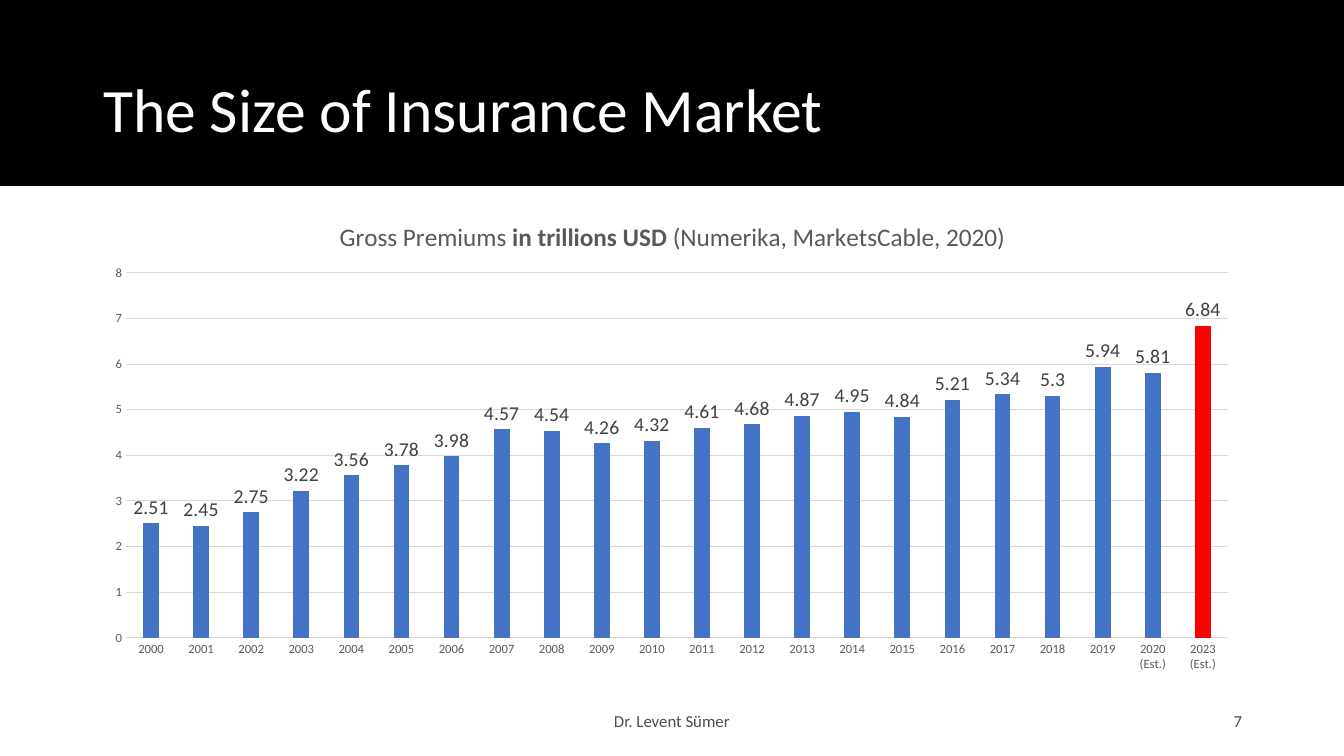
"""Build the insurance market size slide with its gross premiums column chart."""
from lxml.etree import SubElement
from pptx import Presentation
from pptx.chart.data import CategoryChartData
from pptx.dml.color import RGBColor
from pptx.enum.chart import XL_CHART_TYPE, XL_LABEL_POSITION, XL_TICK_MARK
from pptx.enum.shapes import MSO_SHAPE
from pptx.enum.text import MSO_ANCHOR, PP_ALIGN
from pptx.oxml.ns import qn
from pptx.util import Pt

HEADING = "The Size of Insurance Market"
CHART_TITLE = [
    ("Gross Premiums ", False),
    ("in trillions USD", True),
    (" (Numerika, MarketsCable, 2020)", False),
]
YEARS = [str(year) for year in range(2000, 2020)] + ["2020 (Est.)", "2023 (Est.)"]
PREMIUMS = [
    2.51, 2.45, 2.75, 3.22, 3.56, 3.78, 3.98, 4.57, 4.54, 4.26, 4.32,
    4.61, 4.68, 4.87, 4.95, 4.84, 5.21, 5.34, 5.3, 5.94, 5.81, 6.84,
]
FOOTERS = [
    ("Dr. Levent Sümer", 445, 454, PP_ALIGN.CENTER),
    ("7", 950, 302, PP_ALIGN.RIGHT),
]
COLORS = {
    "black": "000000", "white": "FFFFFF", "bar": "4472C4", "forecast": "FF0000",
    "grid": "D9D9D9", "axis": "595959", "label": "404040",
}
FONT = "Calibri"
EMU_PER_PX = 914400 / 100.8
SLIDE_W, SLIDE_H, BAND_H = 1344, 756, 186
CHART_BOX = (93, 202, 1159, 480)
PLOT_BOX = (126, 273, 1102, 365)


def px(*lengths):
    return [round(length * EMU_PER_PX) for length in lengths]


def color(name):
    return RGBColor.from_string(COLORS[name])


def style(font, size, name, bold=False):
    font.name, font.size, font.bold = FONT, Pt(size), bold
    font.color.rgb = color(name)


def add_band(slide, top, height, name):
    band = slide.shapes.add_shape(MSO_SHAPE.RECTANGLE, *px(0, top, SLIDE_W, height))
    band.shadow.inherit = False
    band.fill.solid()
    band.fill.fore_color.rgb = color(name)
    band.line.fill.background()


def place_heading(slide):
    heading = slide.shapes.title
    heading.left, heading.top, heading.width, heading.height = px(93, 40, 1159, 146)
    frame = heading.text_frame
    frame.text = HEADING
    frame.vertical_anchor = MSO_ANCHOR.MIDDLE
    paragraph = frame.paragraphs[0]
    paragraph.alignment, paragraph.line_spacing = PP_ALIGN.LEFT, 0.9
    style(paragraph.runs[0].font, 44, "white")
    slide.shapes.element.append(heading.element)


def add_footer(slide, words, left, width, alignment):
    frame = slide.shapes.add_textbox(*px(left, 701, width, 40)).text_frame
    frame.word_wrap = True
    frame.vertical_anchor = MSO_ANCHOR.MIDDLE
    frame.text = words
    paragraph = frame.paragraphs[0]
    paragraph.alignment, paragraph.space_after = alignment, Pt(6)
    style(paragraph.runs[0].font, 12, "black")
    for ink in frame._txBody.iter(qn("a:srgbClr")):
        SubElement(ink, qn("a:alpha"), val="70000")


def set_plot_layout(chart):
    plot_area = chart._chartSpace.chart.plotArea
    for old in plot_area.findall(qn("c:layout")):
        plot_area.remove(old)
    layout = SubElement(plot_area, qn("c:layout"))
    plot_area.insert(0, layout)
    manual = SubElement(layout, qn("c:manualLayout"))
    left, top, width, height = CHART_BOX
    x, y, w, h = PLOT_BOX
    settings = {
        "layoutTarget": "inner", "xMode": "edge", "yMode": "edge",
        "x": (x - left) / width, "y": (y - top) / height,
        "w": w / width, "h": h / height,
    }
    for tag, value in settings.items():
        SubElement(manual, qn(f"c:{tag}"), val=str(value))


def style_axes(chart):
    years, amounts = chart.category_axis, chart.value_axis
    for axis in (years, amounts):
        axis.major_tick_mark = axis.minor_tick_mark = XL_TICK_MARK.NONE
        style(axis.tick_labels.font, 9, "axis")
    amounts.minimum_scale, amounts.maximum_scale, amounts.major_unit = 0, 8, 1
    amounts.format.line.fill.background()
    for line in (years.format.line, amounts.major_gridlines.format.line):
        line.color.rgb, line.width = color("grid"), Pt(0.75)


def add_premiums_chart(slide):
    premiums = CategoryChartData()
    premiums.categories = YEARS
    premiums.add_series("Series 1", PREMIUMS)
    chart = slide.shapes.add_chart(
        XL_CHART_TYPE.COLUMN_CLUSTERED, *px(*CHART_BOX), premiums).chart
    style(chart.font, 10, "black")
    chart.has_legend = False
    title = chart.chart_title.text_frame.paragraphs[0]
    for words, bold in CHART_TITLE:
        run = title.add_run()
        run.text = words
        style(run.font, 18, "axis", bold)
    style_axes(chart)
    set_plot_layout(chart)

    plot = chart.plots[0]
    plot.gap_width, plot.overlap, plot.vary_by_categories = 219, -27, False
    columns = plot.series[0]
    columns.invert_if_negative = False
    forecast = columns.points[len(PREMIUMS) - 1]
    for part, name in ((columns, "bar"), (forecast, "forecast")):
        part.format.fill.solid()
        part.format.fill.fore_color.rgb = color(name)
    labels = columns.data_labels
    labels.show_value = True
    labels.position = XL_LABEL_POSITION.OUTSIDE_END
    style(labels.font, 14, "label")


def main():
    deck = Presentation()
    deck.slide_width, deck.slide_height = px(SLIDE_W, SLIDE_H)
    slide = deck.slides.add_slide(deck.slide_layouts[5])
    add_band(slide, 0, BAND_H, "black")
    add_band(slide, BAND_H, SLIDE_H - BAND_H, "white")
    place_heading(slide)
    for footer in FOOTERS:
        add_footer(slide, *footer)
    add_premiums_chart(slide)
    deck.save("out.pptx")


if __name__ == "__main__":
    main()
